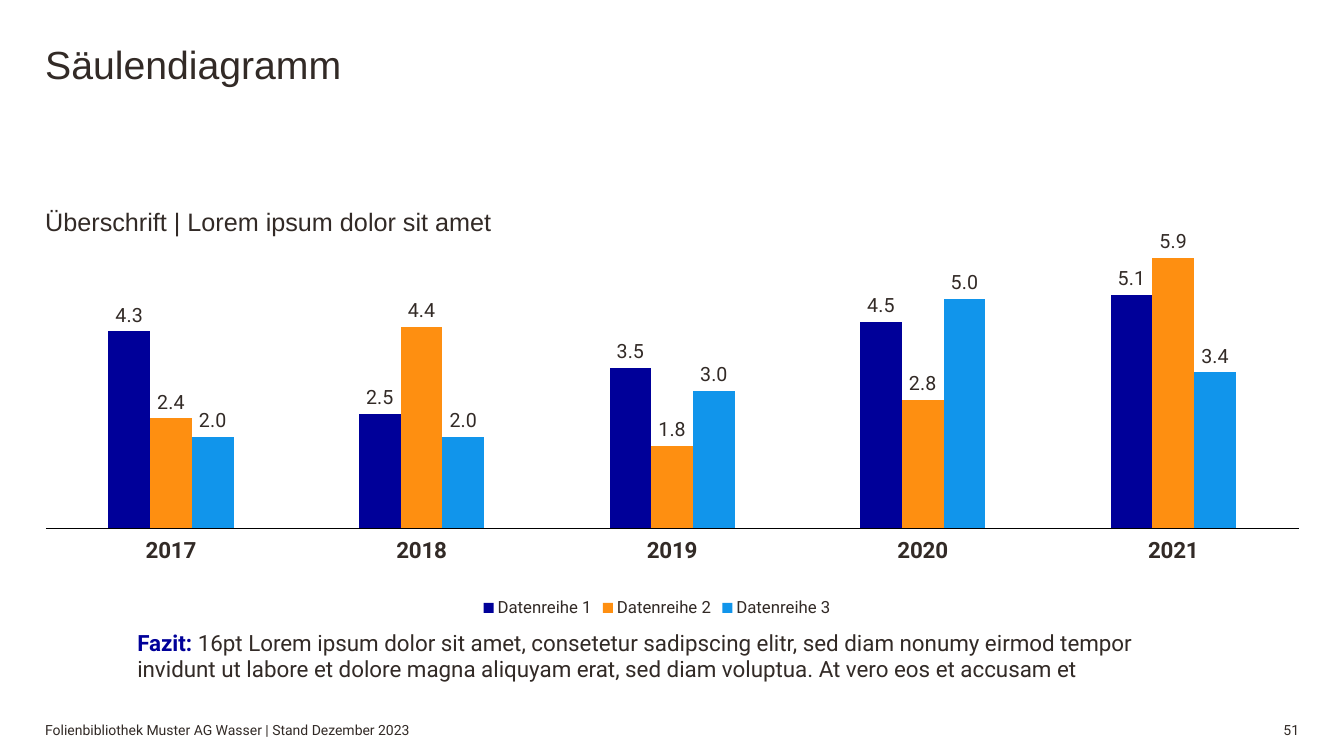
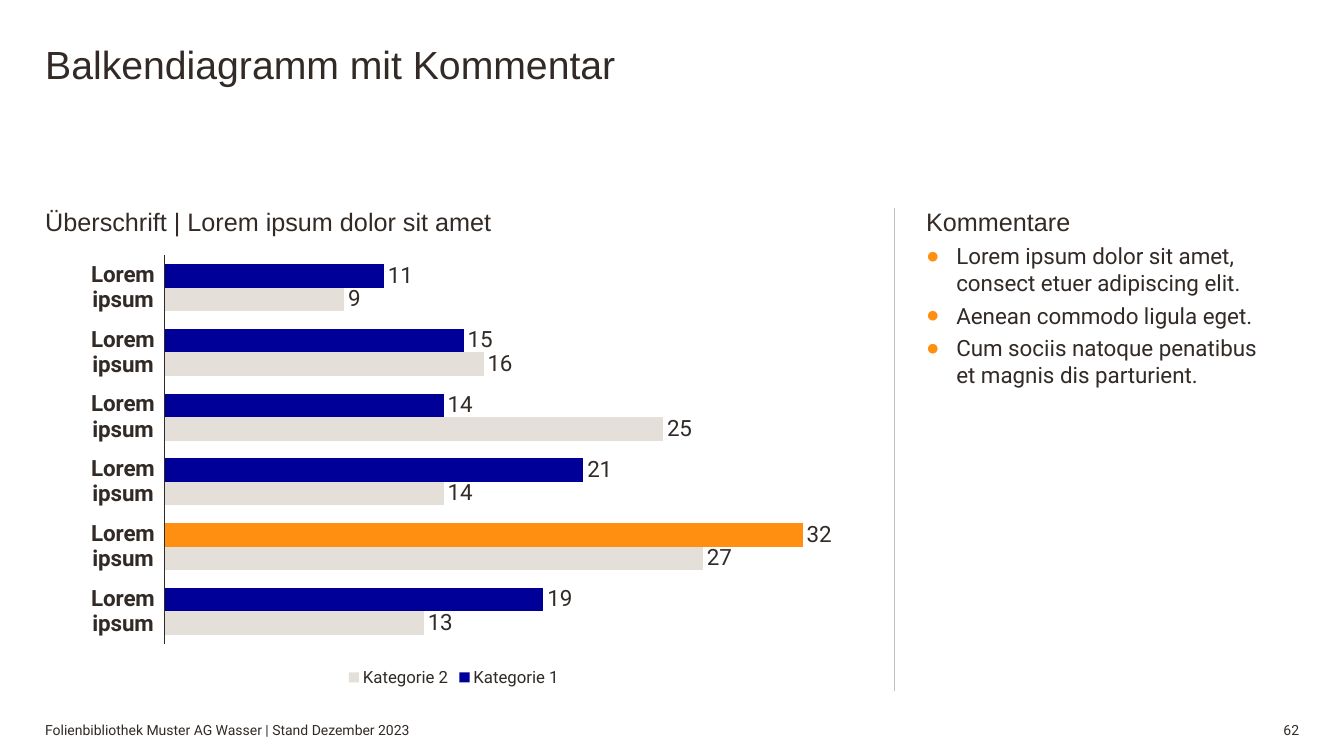
from lxml import etree
from pptx import Presentation
from pptx.chart.data import CategoryChartData
from pptx.dml.color import RGBColor
from pptx.enum.chart import XL_CHART_TYPE, XL_LABEL_POSITION, XL_LEGEND_POSITION, XL_TICK_LABEL_POSITION, XL_TICK_MARK
from pptx.enum.shapes import MSO_CONNECTOR
from pptx.enum.text import MSO_ANCHOR, MSO_AUTO_SIZE, PP_ALIGN
from pptx.oxml.ns import qn
from pptx.util import Cm, Pt

COLUMNS, BARS = XL_CHART_TYPE.COLUMN_CLUSTERED, XL_CHART_TYPE.BAR_CLUSTERED
OUTSIDE_END = XL_LABEL_POSITION.OUTSIDE_END
LEGEND_BOTTOM = XL_LEGEND_POSITION.BOTTOM
LABELS_LOW = XL_TICK_LABEL_POSITION.LOW
NO_TICKS = XL_TICK_MARK.NONE
STRAIGHT = MSO_CONNECTOR.STRAIGHT
TOP, MIDDLE, BOTTOM = MSO_ANCHOR.TOP, MSO_ANCHOR.MIDDLE, MSO_ANCHOR.BOTTOM
LEFT, RIGHT = PP_ALIGN.LEFT, PP_ALIGN.RIGHT

INK, BLACK, GREY = "322A26", "000000", "BFBFBF"
NAVY, ORANGE, SKY, SAND = "000099", "FE8F11", "1195EB", "E5DFDA"
HEADING_FONT, BODY_FONT = "Arial", "Roboto"

TITLE_AND_CONTENT, TITLE_ONLY = 1, 5
MARGIN, CONTENT_WIDTH = 1.14, 31.6
HEADING_TOP, HEADING_HEIGHT = 5.13, 0.89
CONTENT_BOTTOM = 17.42
CHART_HEIGHT = 11
FOOTER = "Folienbibliothek Muster AG Wasser | Stand Dezember 2023"
HEADING = "Überschrift | Lorem ipsum dolor sit amet"


def rgb(color):
    return RGBColor.from_string(color)


def set_font(font, size, color=INK, name=BODY_FONT, bold=False):
    font.size, font.name, font.bold = Pt(size), name, bold
    font.color.rgb = rgb(color)


def add_text(paragraph, text, **font_format):
    """Append text to a paragraph; each newline becomes a line break."""
    for index, line in enumerate(text.split("\n")):
        if index:
            paragraph.add_line_break()
        run = paragraph.add_run()
        run.text = line
        set_font(run.font, **font_format)


def prepare_frame(shape, box=None, anchor=TOP, wrap=True):
    """Place a text shape and return its frame without insets."""
    if box:
        shape.left, shape.top, shape.width, shape.height = (Cm(length) for length in box)
    frame = shape.text_frame
    frame.margin_left = frame.margin_right = frame.margin_top = frame.margin_bottom = 0
    frame.auto_size = MSO_AUTO_SIZE.NONE
    frame.vertical_anchor, frame.word_wrap = anchor, wrap
    return frame


def add_frame(slide, box, **frame_format):
    shape = slide.shapes.add_textbox(*(Cm(length) for length in box))
    return prepare_frame(shape, **frame_format)


def write_heading(paragraph, text):
    paragraph.line_spacing = 1.1
    paragraph.space_before, paragraph.space_after = Pt(0), Pt(4)
    add_text(paragraph, text, size=18, name=HEADING_FONT)


def add_heading(slide, width):
    frame = add_frame(slide, (MARGIN, HEADING_TOP, width, HEADING_HEIGHT))
    write_heading(frame.paragraphs[0], HEADING)


def set_bullet(paragraph, character=None, indent=0.0):
    properties = paragraph._p.get_or_add_pPr()
    properties.set("marL", str(Cm(indent)))
    properties.set("indent", str(-Cm(indent)))
    if character is None:
        etree.SubElement(properties, qn("a:buNone"))
        return
    color = etree.SubElement(properties, qn("a:buClr"))
    etree.SubElement(color, qn("a:srgbClr"), val=ORANGE)
    etree.SubElement(properties, qn("a:buFont"), typeface=HEADING_FONT)
    etree.SubElement(properties, qn("a:buChar"), char=character)


def set_layout(parent, position, **values):
    """Give a plot area or legend a manual layout in fractions of the chart."""
    for old_layout in parent.findall(qn("c:layout")):
        parent.remove(old_layout)
    layout = etree.Element(qn("c:layout"))
    manual = etree.SubElement(layout, qn("c:manualLayout"))
    for name, value in values.items():
        etree.SubElement(manual, qn(f"c:{name}"), val=str(value))
    parent.insert(position, layout)


def add_bar_chart(slide, box, kind, categories, series, gap, maximum, plot_box,
                  label_size, number_format="General", axis_color=INK):
    """Add a clustered chart; series holds (name, values, color)."""
    data = CategoryChartData()
    data.categories = categories
    for name, values, _ in series:
        data.add_series(name, values)
    chart = slide.shapes.add_chart(kind, *(Cm(length) for length in box), data).chart
    set_font(chart.font, 10)
    chart.has_title = False
    chart.has_legend = True
    chart.legend.position, chart.legend.include_in_layout = LEGEND_BOTTOM, False
    set_font(chart.legend.font, 12)

    plot = chart.plots[0]
    plot.gap_width, plot.overlap, plot.vary_by_categories = gap, 0, False
    for bars, (_, _, color) in zip(plot.series, series):
        bars.format.fill.solid()
        bars.format.fill.fore_color.rgb = rgb(color)
        bars.invert_if_negative = False
        labels = bars.data_labels
        labels.show_value, labels.position = True, OUTSIDE_END
        labels.number_format, labels.number_format_is_linked = number_format, False
        set_font(labels.font, label_size)

    value_axis, category_axis = chart.value_axis, chart.category_axis
    value_axis.minimum_scale, value_axis.maximum_scale = 0, maximum
    value_axis.has_major_gridlines = value_axis.visible = False
    category_axis.major_tick_mark = category_axis.minor_tick_mark = NO_TICKS
    category_axis.tick_label_position = LABELS_LOW
    category_axis.format.line.width = Pt(0.75)
    category_axis.format.line.color.rgb = rgb(axis_color)
    set_font(category_axis.tick_labels.font, 16, bold=True)

    left, top, width, height = plot_box
    set_layout(chart._chartSpace.chart.plotArea, 0, layoutTarget="inner",
               xMode="edge", yMode="edge", x=left, y=top, w=width, h=height)
    return chart


def add_base_slide(presentation, layout, title, number):
    """Add a slide with its title, footer and page number."""
    slide = presentation.slides.add_slide(presentation.slide_layouts[layout])
    frame = prepare_frame(slide.shapes.title, (MARGIN, 0.91, 24.41, 1.4), MIDDLE)
    frame.paragraphs[0].alignment = LEFT
    add_text(frame.paragraphs[0], title, size=28, name=HEADING_FONT)
    footer = add_frame(slide, (MARGIN, 18.19, 28.09, 0.41), anchor=BOTTOM)
    add_text(footer.paragraphs[0], FOOTER, size=10)
    page = add_frame(slide, (31.95, 18.19, 0.79, 0.41), anchor=BOTTOM, wrap=False)
    page.paragraphs[0].alignment = RIGHT
    add_text(page.paragraphs[0], number, size=10)
    return slide


def add_conclusion(slide, box):
    paragraph = add_frame(slide, box, anchor=MIDDLE).paragraphs[0]
    paragraph.space_after = Pt(6)
    add_text(paragraph, "Fazit: ", size=16, color=NAVY, bold=True)
    add_text(paragraph, "16pt Lorem ipsum dolor sit amet, consetetur sadipscing elitr, "
             "sed diam nonumy eirmod tempor\ninvidunt ut labore et dolore magna "
             "aliquyam erat, sed diam voluptua. At vero eos et accusam et", size=16)


def add_comments(slide, box, comments):
    frame = prepare_frame(slide.placeholders[1], box)
    heading = frame.paragraphs[0]
    set_bullet(heading)
    write_heading(heading, "Kommentare")
    for comment in comments:
        paragraph = frame.add_paragraph()
        set_bullet(paragraph, "●", 0.76)
        paragraph.space_before, paragraph.space_after = Pt(0), Pt(4)
        add_text(paragraph, comment, size=16)


def add_divider(slide, x, top, bottom):
    divider = slide.shapes.add_connector(STRAIGHT, Cm(x), Cm(top), Cm(x), Cm(bottom))
    divider.line.color.rgb = rgb(GREY)
    divider.line.width = Pt(0.75)
    etree.SubElement(divider._element.spPr, qn("a:effectLst"))


def build_column_slide(presentation):
    slide = add_base_slide(presentation, TITLE_ONLY, "Säulendiagramm", "51")
    chart = add_bar_chart(
        slide, (MARGIN, 5.23, CONTENT_WIDTH, CHART_HEIGHT), COLUMNS,
        ["2017", "2018", "2019", "2020", "2021"],
        [("Datenreihe 1", (4.3, 2.5, 3.5, 4.5, 5.1), NAVY),
         ("Datenreihe 2", (2.4, 4.4, 1.8, 2.8, 5.9), ORANGE),
         ("Datenreihe 3", (2, 2, 3, 5, 3.4), SKY)],
        gap=300, maximum=7, plot_box=(0, 0, 1, 0.735), label_size=14,
        number_format="#,##0.0", axis_color=BLACK)
    set_layout(chart.legend._element, 1, xMode="edge", yMode="edge", x=0.345, y=0.885)
    add_heading(slide, CONTENT_WIDTH)
    add_conclusion(slide, (3.46, 15.62, 29.28, 1.8))


def build_bar_slide(presentation):
    slide = add_base_slide(presentation, TITLE_AND_CONTENT, "Balkendiagramm mit Kommentar", "62")
    chart_width = 20.6
    add_heading(slide, chart_width)
    chart = add_bar_chart(
        slide, (MARGIN, CONTENT_BOTTOM - CHART_HEIGHT, chart_width, CHART_HEIGHT), BARS,
        ["Lorem ipsum"] * 6,
        [("Kategorie 1", (11, 15, 14, 21, 32, 19), NAVY),
         ("Kategorie 2", (9, 16, 25, 14, 27, 13), SAND)],
        gap=75, maximum=35, plot_box=(0.146, 0, 0.854, 0.891), label_size=16)
    chart.category_axis.reverse_order = True
    highlight = chart.plots[0].series[0].points[4].format.fill
    highlight.solid()
    highlight.fore_color.rgb = rgb(ORANGE)
    add_comments(slide, (23.34, HEADING_TOP, 9.4, CONTENT_BOTTOM - HEADING_TOP), [
        "Lorem ipsum dolor sit amet, consect etuer adipiscing elit.",
        "Aenean commodo ligula eget.",
        "Cum sociis natoque penatibus\net magnis dis parturient."])
    add_divider(slide, 22.53, 5.23, CONTENT_BOTTOM)


def main():
    presentation = Presentation()
    presentation.slide_width, presentation.slide_height = Cm(33.87), Cm(19.05)
    build_column_slide(presentation)
    build_bar_slide(presentation)
    presentation.save("out.pptx")


if __name__ == "__main__":
    main()
